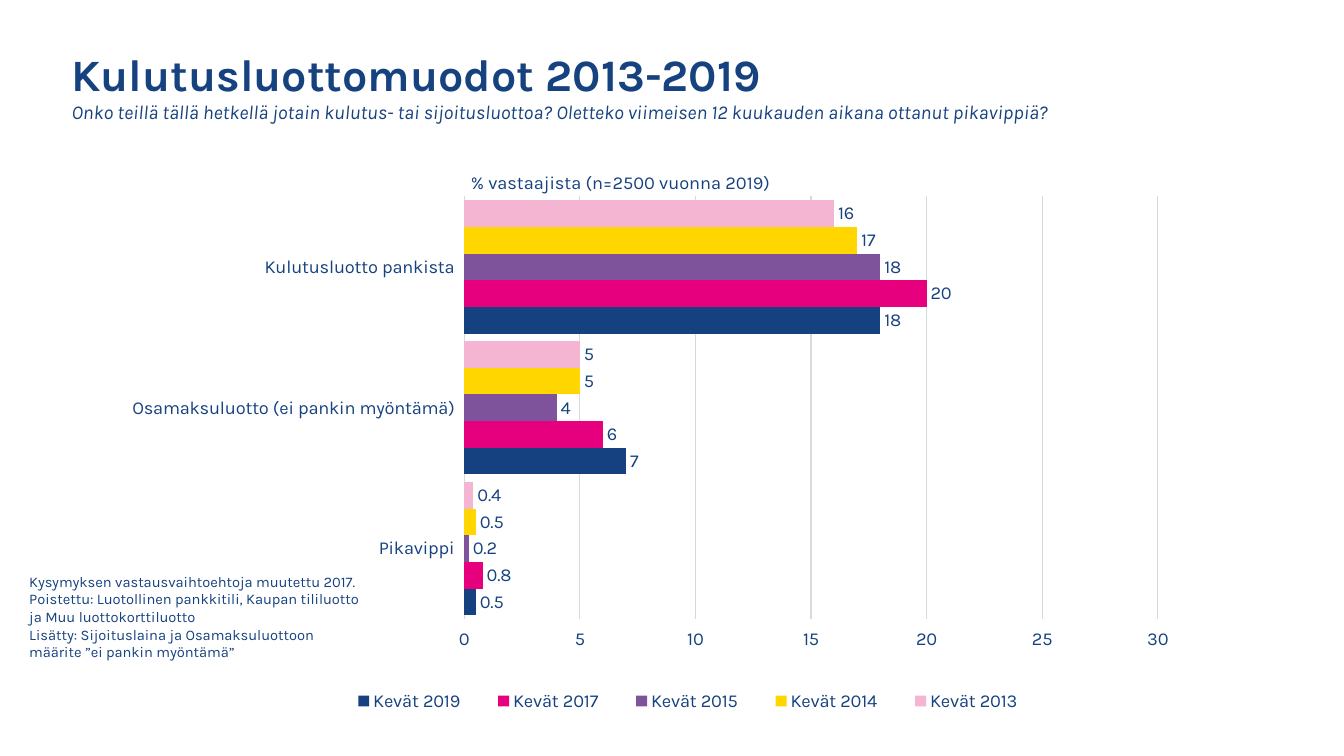
"""Build a slide with a bar chart of consumer credit types, 2013-2019."""
from lxml import etree
from pptx import Presentation
from pptx.chart.data import CategoryChartData
from pptx.dml.color import RGBColor
from pptx.enum.chart import (XL_CHART_TYPE, XL_LABEL_POSITION, XL_LEGEND_POSITION,
                             XL_TICK_LABEL_POSITION, XL_TICK_MARK)
from pptx.enum.text import MSO_ANCHOR, MSO_AUTO_SIZE, PP_ALIGN
from pptx.oxml.ns import qn
from pptx.util import Inches, Pt

BAR_CLUSTERED = XL_CHART_TYPE.BAR_CLUSTERED
OUTSIDE_END = XL_LABEL_POSITION.OUTSIDE_END
LEGEND_BOTTOM = XL_LEGEND_POSITION.BOTTOM
LABELS_LOW = XL_TICK_LABEL_POSITION.LOW
LABELS_HIGH = XL_TICK_LABEL_POSITION.HIGH
NO_TICK = XL_TICK_MARK.NONE
TOP = MSO_ANCHOR.TOP
FIT_SHAPE = MSO_AUTO_SIZE.SHAPE_TO_FIT_TEXT
LEFT = PP_ALIGN.LEFT

FONT = "Karla"
COLORS = {"text": "164280", "grid": "D9D9D9", "background": "FFFFFF"}

TITLE = "Kulutusluottomuodot 2013-2019"
QUESTION = ("Onko teillä tällä hetkellä jotain kulutus- tai sijoitusluottoa? "
            "Oletteko viimeisen 12 kuukauden aikana ottanut pikavippiä?")
UNIT = "% vastaajista (n=2500 vuonna 2019)"
NOTES = [
    "Kysymyksen vastausvaihtoehtoja muutettu 2017.",
    "Poistettu: Luotollinen pankkitili, Kaupan tililuotto ja Muu luottokorttiluotto",
    "Lisätty: Sijoituslaina ja Osamaksuluottoon määrite ”ei pankin myöntämä”",
]
CATEGORIES = ["Kulutusluotto pankista", "Osamaksuluotto (ei pankin myöntämä)", "Pikavippi"]
SERIES = [
    ("Kevät 2013", (16, 5, 0.4), "F4B5D3"),
    ("Kevät 2014", (17, 5, 0.5), "FFD600"),
    ("Kevät 2015", (18, 4, 0.2), "7F539C"),
    ("Kevät 2017", (20, 6, 0.8), "E6007E"),
    ("Kevät 2019", (18, 7, 0.5), "164180"),
]
CHART_BOX = (0.05, 1.44, 13.28, 5.93)
PLOT_AREA = {"x": 0.343, "y": 0.086, "w": 0.518, "h": 0.707}
LEGEND_AREA = {"x": 0.24, "y": 0.9, "w": 0.54, "h": 0.06}


def style_font(font, size):
    """Apply the slide font, colour and a size in points."""
    font.name = FONT
    font.size = Pt(size)
    font.color.rgb = RGBColor.from_string(COLORS["text"])


def fill_text(shape, box, lines, size, bold=False, italic=False, wrap=True, inset=0.13):
    """Place a shape and write one paragraph per line."""
    shape.left, shape.top, shape.width, shape.height = map(Inches, box)
    frame = shape.text_frame
    frame.word_wrap = wrap
    frame.auto_size = FIT_SHAPE
    frame.vertical_anchor = TOP
    frame.margin_left, frame.margin_right = Inches(inset), Inches(0.13)
    frame.margin_top = frame.margin_bottom = Inches(0.07)
    for index, line in enumerate(lines):
        paragraph = frame.add_paragraph() if index else frame.paragraphs[0]
        paragraph.alignment = LEFT
        run = paragraph.add_run()
        run.text = line
        style_font(run.font, size)
        run.font.bold, run.font.italic = bold, italic


def set_layout(element, position, area, target=None):
    """Fix a chart part at the given fractions of the chart."""
    layout = element.find(qn("c:layout"))
    if layout is None:
        layout = etree.Element(qn("c:layout"))
        element.insert(position, layout)
    for child in list(layout):
        layout.remove(child)
    manual = etree.SubElement(layout, qn("c:manualLayout"))
    settings = [("layoutTarget", target)] if target else []
    settings += [("xMode", "edge"), ("yMode", "edge"), *area.items()]
    for name, value in settings:
        etree.SubElement(manual, qn(f"c:{name}")).set("val", str(value))


def style_axes(chart):
    """Format the category and value axes."""
    grid_color = RGBColor.from_string(COLORS["grid"])
    category_axis, value_axis = chart.category_axis, chart.value_axis
    for axis in (category_axis, value_axis):
        axis.major_tick_mark = axis.minor_tick_mark = NO_TICK
        style_font(axis.tick_labels.font, 13)
    category_axis.reverse_order = True
    category_axis.tick_label_position = LABELS_LOW
    category_axis.format.line.color.rgb = grid_color
    category_axis.format.line.width = Pt(0.25)
    value_axis.tick_label_position = LABELS_HIGH
    value_axis.minimum_scale, value_axis.maximum_scale = 0, 30
    value_axis.major_unit = 5
    value_axis.format.line.fill.background()
    value_axis.major_gridlines.format.line.color.rgb = grid_color
    value_axis.major_gridlines.format.line.width = Pt(0.75)


def add_credit_chart(slide):
    """Add the clustered bar chart."""
    data = CategoryChartData()
    data.categories = CATEGORIES
    for name, values, _ in SERIES:
        data.add_series(name, values)
    chart = slide.shapes.add_chart(BAR_CLUSTERED, *map(Inches, CHART_BOX), data).chart
    chart.has_title = False
    style_font(chart.font, 11)
    chart.has_legend = True
    chart.legend.position = LEGEND_BOTTOM
    chart.legend.include_in_layout = False
    style_font(chart.legend.font, 13)
    plot = chart.plots[0]
    plot.gap_width, plot.overlap, plot.vary_by_categories = 28, 0, False
    for series, (_, _, color) in zip(plot.series, SERIES):
        series.format.fill.solid()
        series.format.fill.fore_color.rgb = RGBColor.from_string(color)
        labels = series.data_labels
        labels.show_value = True
        labels.position = OUTSIDE_END
        style_font(labels.font, 13)
    style_axes(chart)
    set_layout(plot._element.getparent(), 0, PLOT_AREA, "inner")
    set_layout(chart.legend._element, 1, LEGEND_AREA)


def main():
    """Build and save the slide."""
    presentation = Presentation()
    presentation.slide_width, presentation.slide_height = Inches(13.33), Inches(7.5)
    slide = presentation.slides.add_slide(presentation.slide_layouts[5])
    slide.background.fill.solid()
    slide.background.fill.fore_color.rgb = RGBColor.from_string(COLORS["background"])
    add_credit_chart(slide)
    fill_text(slide.shapes.title, (0.58, 0.39, 7.34, 0.67), [TITLE], 32, bold=True, wrap=False)
    text_boxes = [
        ((0.58, 0.92, 10.92, 0.37), [QUESTION], 14, {"italic": True}),
        ((4.62, 1.63, 8.61, 0.35), [UNIT], 13, {"inset": 0.05}),
        ((0.16, 5.61, 3.59, 1.02), NOTES, 10.5, {}),
    ]
    for box, lines, size, options in text_boxes:
        text_box = slide.shapes.add_textbox(*map(Inches, box))
        fill_text(text_box, box, lines, size, **options)
    presentation.save("out.pptx")


if __name__ == "__main__":
    main()
